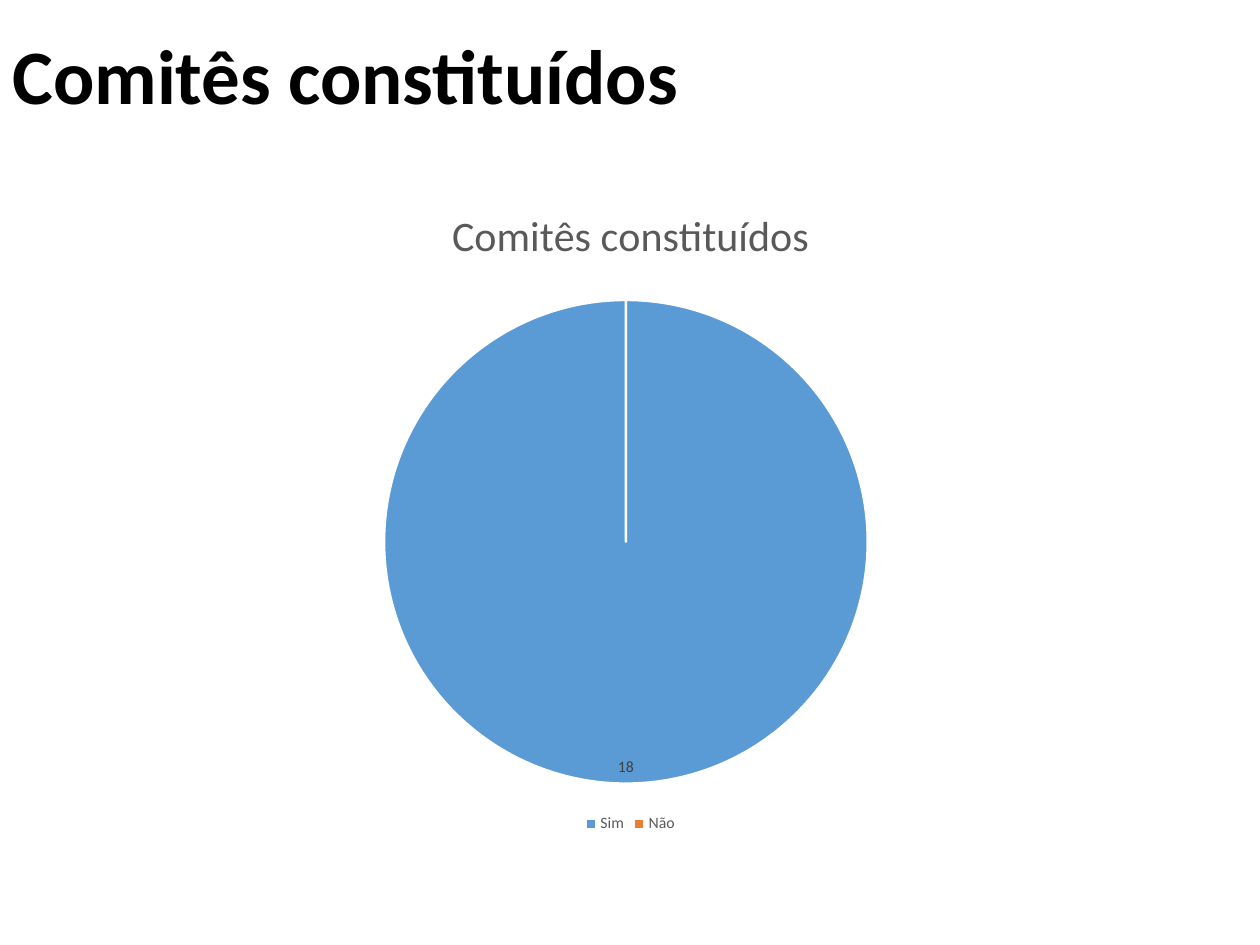
import dataclasses

import pptx
import pptx.chart.data
import pptx.dml.color
import pptx.enum.chart
import pptx.enum.text
import pptx.oxml
import pptx.oxml.ns
import pptx.util

EMU_PER_PX = 914400 // 126


@dataclasses.dataclass(frozen=True)
class Theme:
    font: str = "Calibri"
    heading: str = "000000"
    muted: str = "595959"
    label: str = "404040"
    separator: str = "FFFFFF"
    slices: tuple = ("5B9BD5", "ED7D31")
    heading_size: int = 44
    chart_title_size: int = 24
    legend_size: int = 9
    label_size: int = 9


THEME = Theme()


def px(length):
    return pptx.util.Emu(length * EMU_PER_PX)


def rgb(value):
    return pptx.dml.color.RGBColor.from_string(value)


def style_font(font, size, color, bold=False):
    font.name = THEME.font
    font.size = pptx.util.Pt(size)
    font.bold = bold
    font.color.rgb = rgb(color)


def write_text(frame, text, *, size, color, bold=False, line_spacing=None):
    paragraph = frame.paragraphs[0]
    if line_spacing is not None:
        paragraph.line_spacing = line_spacing
    run = paragraph.add_run()
    run.text = text
    style_font(run.font, size, color, bold)


def add_heading(slide, text, left, top, width, height):
    frame = slide.shapes.add_textbox(px(left), px(top), px(width), px(height)).text_frame
    frame.word_wrap = True
    frame.vertical_anchor = pptx.enum.text.MSO_ANCHOR.TOP
    write_text(frame, text, size=THEME.heading_size, color=THEME.heading,
               bold=True, line_spacing=0.9)


def place_plot(chart, **fractions):
    """Fix the inner plot area, in fractions of the chart's size."""
    plot_area = chart.plots[0]._element.getparent()
    for layout in plot_area.findall(pptx.oxml.ns.qn("c:layout")):
        plot_area.remove(layout)
    values = "".join(f'<c:{name} val="{value}"/>' for name, value in fractions.items())
    plot_area.insert(0, pptx.oxml.parse_xml(
        f'<c:layout {pptx.oxml.ns.nsdecls("c")}><c:manualLayout>'
        '<c:layoutTarget val="inner"/><c:xMode val="edge"/><c:yMode val="edge"/>'
        f'{values}</c:manualLayout></c:layout>'))


def add_pie(slide, title, counts, left, top, width, height):
    data = pptx.chart.data.CategoryChartData()
    data.categories = list(counts)
    data.add_series(title, list(counts.values()))
    chart = slide.shapes.add_chart(
        pptx.enum.chart.XL_CHART_TYPE.PIE,
        px(left), px(top), px(width), px(height), data).chart
    style_font(chart.font, THEME.legend_size, THEME.muted)

    chart.has_title = True
    write_text(chart.chart_title.text_frame, title,
               size=THEME.chart_title_size, color=THEME.muted)
    chart.chart_title.include_in_layout = False

    chart.has_legend = True
    chart.legend.position = pptx.enum.chart.XL_LEGEND_POSITION.BOTTOM
    chart.legend.include_in_layout = False
    style_font(chart.legend.font, THEME.legend_size, THEME.muted)

    pie = chart.plots[0]
    pie.vary_by_categories = True
    for index, color in enumerate(THEME.slices):
        slice_format = pie.series[0].points[index].format
        slice_format.fill.solid()
        slice_format.fill.fore_color.rgb = rgb(color)
        slice_format.line.color.rgb = rgb(THEME.separator)
        slice_format.line.width = pptx.util.Pt(1.5)

    labels = pie.series[0].data_labels
    labels.show_value = True
    labels.show_percentage = False
    labels.number_format = "0;;;"  # zero counts carry no label
    labels.number_format_is_linked = False
    labels.position = pptx.enum.chart.XL_LABEL_POSITION.INSIDE_END
    style_font(labels.font, THEME.label_size, THEME.label)
    place_plot(chart, x=0.23, y=0.18, w=0.53, h=0.74)


def main():
    presentation = pptx.Presentation()
    presentation.slide_width = px(1260)
    presentation.slide_height = px(945)
    slide = presentation.slides.add_slide(presentation.slide_layouts[6])
    topic = "Comitês constituídos"
    add_heading(slide, topic, 0, 32, 1086, 183)
    add_pie(slide, topic, {"Sim": 18, "Não": 0}, 174, 180, 913, 658)
    presentation.save("out.pptx")


if __name__ == "__main__":
    main()
